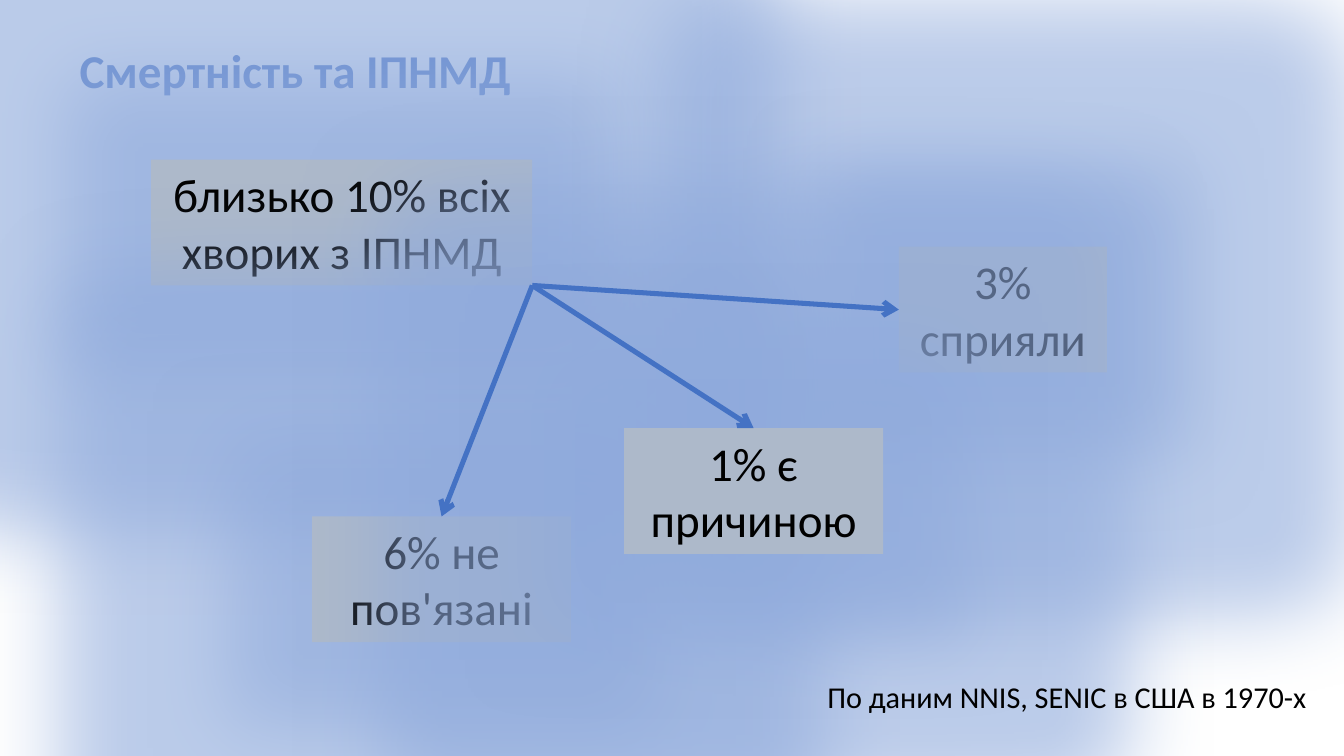
from lxml import etree
from pptx import Presentation
from pptx.dml.color import RGBColor
from pptx.enum import shapes, text
from pptx.oxml import ns
from pptx.util import Inches, Pt

TITLE = "Смертність та ІПНМД"
SOURCE = "По даним NNIS, SENIC в США в 1970-х"
BLUE, GREY, HAZE, BLACK = "4472C4", "ADB9CA", "8FAADC", "000000"
BOX_HEIGHT = 1.04
GLOW_RADIUS = 1.4
TOP, LEFT = 0, 1

ALL_PATIENTS = ("близько 10% всіх хворих з ІПНМД", 1.25, 1.32, 3.15)
# Text, left, top, width, side where the arrow arrives
OUTCOMES = [
    ("6% не пов'язані", 2.58, 4.27, 2.14, TOP),
    ("3% сприяли", 7.43, 2.04, 1.72, LEFT),
    ("1% є причиною", 5.16, 3.54, 2.14, TOP),
]


def color(hex_string):
    return RGBColor.from_string(hex_string)


def add_child(parent, tag, **attributes):
    return etree.SubElement(parent, ns.qn(tag), attributes)


def write(shape, words, size=28, fill=BLACK, bold=False, align=None, wrap=True):
    frame = shape.text_frame
    frame.word_wrap = wrap
    frame.vertical_anchor = text.MSO_ANCHOR.TOP
    paragraph = frame.paragraphs[0]
    paragraph.alignment = align
    run = paragraph.add_run()
    run.text = words
    run.font.name = "Calibri"
    run.font.size = Pt(size)
    run.font.bold = bold
    run.font.color.rgb = color(fill)


def add_label(slide, words, left, top, width, height, **style):
    box = slide.shapes.add_textbox(*map(Inches, (left, top, width, height)))
    write(box, words, **style)


def add_box(slide, words, left, top, width):
    """Add a grey box with a wide pale blue glow."""
    box = slide.shapes.add_shape(
        shapes.MSO_SHAPE.RECTANGLE,
        *map(Inches, (left, top, width, BOX_HEIGHT)))
    box.shadow.inherit = False
    box.fill.solid()
    box.fill.fore_color.rgb = color(GREY)
    box.line.fill.background()
    effects = box._element.spPr.find(ns.qn("a:effectLst"))
    glow = add_child(effects, "a:glow", rad=str(Inches(GLOW_RADIUS)))
    tint = add_child(glow, "a:srgbClr", val=HAZE)
    add_child(tint, "a:alpha", val="60000")
    write(box, words, align=text.PP_ALIGN.CENTER)
    return box


def add_arrow(slide, start, box, side):
    arrow = slide.shapes.add_connector(
        shapes.MSO_CONNECTOR.STRAIGHT, *start, *start)
    arrow.end_connect(box, side)
    arrow.line.color.rgb = color(BLUE)
    arrow.line.width = Pt(3)
    add_child(arrow.line._get_or_add_ln(), "a:tailEnd", type="arrow")
    add_child(arrow._element.spPr, "a:effectLst")


def main():
    presentation = Presentation()
    presentation.slide_width = Inches(11.11)
    presentation.slide_height = Inches(6.25)
    slide = presentation.slides.add_slide(presentation.slide_layouts[6])

    add_label(slide, TITLE, 0.56, 0.29, 10, 0.57, fill=BLUE, bold=True)
    patients = add_box(slide, *ALL_PATIENTS)
    targets = [(add_box(slide, *outcome), side) for *outcome, side in OUTCOMES]
    corner = (patients.left + patients.width, patients.top + patients.height)
    for box, side in targets:
        add_arrow(slide, corner, box, side)
    add_label(slide, SOURCE, 6.74, 5.56, 4.22, 0.4, size=18, wrap=False)
    presentation.save("out.pptx")


if __name__ == "__main__":
    main()
